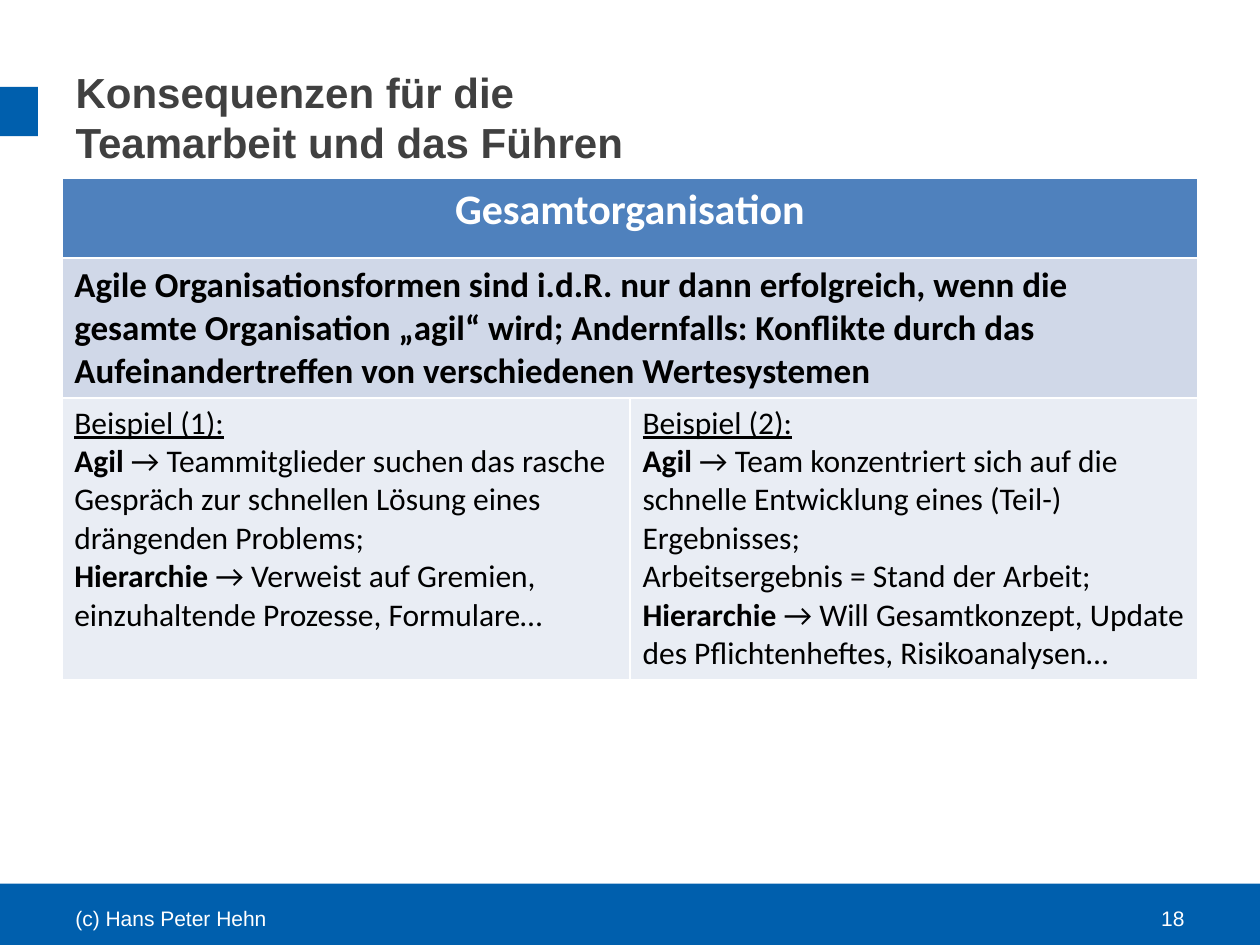
"""Build the slide on what agile forms mean for the whole organisation."""
from pptx import Presentation
from pptx.dml.color import RGBColor
from pptx.enum.shapes import MSO_SHAPE
from pptx.enum.text import MSO_ANCHOR, PP_ALIGN
from pptx.util import Inches, Pt

BLUE = RGBColor(0x00, 0x5F, 0xAD)
GREY = RGBColor(0x40, 0x40, 0x40)
WHITE = RGBColor(0xFF, 0xFF, 0xFF)
BLACK = RGBColor(0x00, 0x00, 0x00)
HEADER_FILL = RGBColor(0x4F, 0x81, 0xBD)
STATEMENT_FILL = RGBColor(0xD0, 0xD8, 0xE8)
EXAMPLE_FILL = RGBColor(0xE9, 0xED, 0xF4)

HEADER = dict(name="Calibri", size=Pt(24), bold=True, color=WHITE)
STATEMENT = dict(name="Calibri", size=Pt(20), bold=True, color=BLACK)
BODY = dict(name="Calibri", size=Pt(18), bold=False, color=BLACK)
STRONG = BODY | dict(bold=True)
LABEL = BODY | dict(underline=True)
TITLE = dict(name="Arial", size=Pt(24), bold=True, color=GREY)
FOOTER = dict(name="Arial", size=Pt(12), bold=False, color=WHITE)

prs = Presentation()
prs.slide_width, prs.slide_height = Inches(10), Inches(7.5)
slide = prs.slides.add_slide(prs.slide_layouts[5])


def box(left, top, width, height):
    """Turn shares of the slide's size into lengths."""
    shares = (left, top, width, height)
    sides = (prs.slide_width, prs.slide_height) * 2
    return [int(share * side) for share, side in zip(shares, sides)]


def write(frame, paragraphs, align=PP_ALIGN.LEFT):
    """Fill a text frame with paragraphs of (text, format) pieces."""
    for index, pieces in enumerate(paragraphs):
        paragraph = frame.add_paragraph() if index else frame.paragraphs[0]
        paragraph.alignment = align
        for text, style in pieces:
            for number, line in enumerate(text.split("\n")):
                if number:
                    paragraph.add_line_break()
                run = paragraph.add_run()
                run.text = line
                for key, value in style.items():
                    if key == "color":
                        run.font.color.rgb = value
                    else:
                        setattr(run.font, key, value)


for area in (box(-0.002, 0.935, 1.014, 0.072), box(-0.002, 0.092, 0.032, 0.052)):
    bar = slide.shapes.add_shape(MSO_SHAPE.RECTANGLE, *area)
    bar.shadow.inherit = False
    bar.fill.solid()
    bar.fill.fore_color.rgb = BLUE
    bar.line.fill.background()

heading = slide.shapes.title
heading.left, heading.top, heading.width, heading.height = box(0.05, 0.04, 0.9, 0.167)
heading.text_frame.vertical_anchor = MSO_ANCHOR.MIDDLE
write(heading.text_frame, [[("Konsequenzen für die\nTeamarbeit und das Führen", TITLE)]])

for left, text, align in (
    (0.05, "(c) Hans Peter Hehn", PP_ALIGN.LEFT),
    (0.717, "18", PP_ALIGN.RIGHT),
):
    footer = slide.shapes.add_textbox(*box(left, 0.945, 0.233, 0.053)).text_frame
    footer.word_wrap = True
    footer.vertical_anchor = MSO_ANCHOR.MIDDLE
    write(footer, [[(text, FOOTER)]], align)

consequences = slide.shapes.add_table(3, 2, *box(0.049, 0.189, 0.902, 0.531)).table
for row, height in zip(consequences.rows, (0.63, 1.11, 2.24)):
    row.height = Inches(height)
for index in (0, 1):
    consequences.cell(index, 0).merge(consequences.cell(index, 1))

statement = (
    "Agile Organisationsformen sind i.d.R. nur dann erfolgreich, wenn die gesamte "
    "Organisation „agil“ wird; Andernfalls: Konflikte durch das Aufeinandertreffen "
    "von verschiedenen Wertesystemen"
)
examples = [
    (
        "Beispiel (1):",
        "→ Teammitglieder suchen das rasche Gespräch zur schnellen Lösung eines "
        "drängenden Problems;",
        "→ Verweist auf Gremien, einzuhaltende Prozesse, Formulare…",
    ),
    (
        "Beispiel (2):",
        "→ Team konzentriert sich auf die schnelle Entwicklung eines (Teil-) "
        "Ergebnisses;\nArbeitsergebnis = Stand der Arbeit;",
        "→ Will Gesamtkonzept, Update des Pflichtenheftes, Risikoanalysen…",
    ),
]
contents = [
    (0, 0, HEADER_FILL, PP_ALIGN.CENTER, [[("Gesamtorganisation", HEADER)]]),
    (1, 0, STATEMENT_FILL, PP_ALIGN.LEFT, [[(statement, STATEMENT)]]),
]
for column, (label, agile, hierarchy) in enumerate(examples):
    paragraphs = [
        [(label, LABEL)],
        [("Agil ", STRONG), (agile, BODY)],
        [("Hierarchie ", STRONG), (hierarchy, BODY)],
    ]
    contents.append((2, column, EXAMPLE_FILL, PP_ALIGN.LEFT, paragraphs))

for row, column, fill, align, paragraphs in contents:
    cell = consequences.cell(row, column)
    cell.fill.solid()
    cell.fill.fore_color.rgb = fill
    write(cell.text_frame, paragraphs, align)

prs.save("out.pptx")
